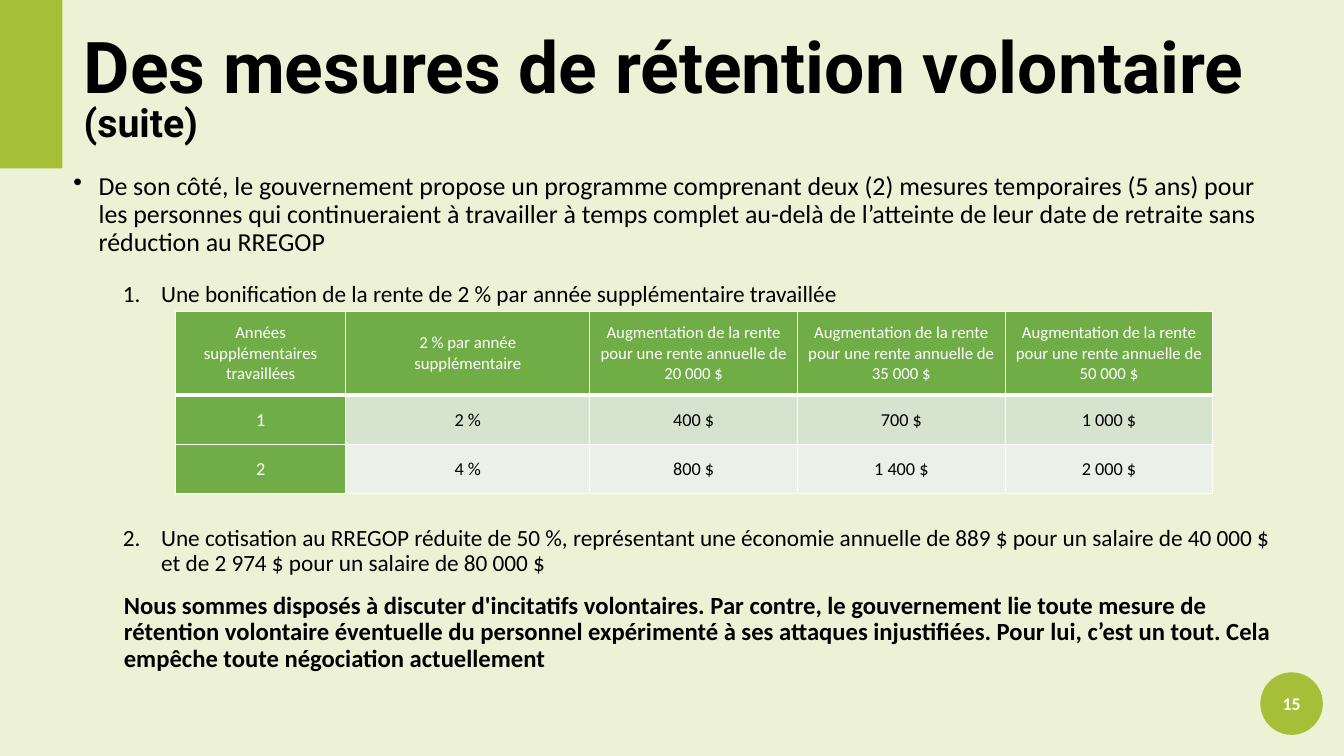
from dataclasses import dataclass

from lxml import etree
from pptx import Presentation
from pptx.dml.color import RGBColor
from pptx.enum.shapes import MSO_SHAPE
from pptx.enum.text import MSO_ANCHOR, PP_ALIGN
from pptx.oxml.ns import qn
from pptx.util import Inches, Pt

RECTANGLE, OVAL = MSO_SHAPE.RECTANGLE, MSO_SHAPE.OVAL
MIDDLE, CENTER = MSO_ANCHOR.MIDDLE, PP_ALIGN.CENTER

LIME, PALE_LIME = "A7BE39", "EDF2D7"
GREEN, BAND_DARK, BAND_LIGHT = "70AD47", "D5E3CF", "EBF1E9"
BLACK, WHITE = "000000", "FFFFFF"


@dataclass
class BodyParagraph:
    text: str
    size: float
    space_before: float = 0
    level: int = 0
    left: float = 0
    hanging: float = 0
    bullet: tuple[str, str, str] | None = None  # tag, attribute, value
    bold: bool = False


BULLET = ("a:buChar", "char", "•")
NUMBER = ("a:buAutoNum", "type", "arabicPeriod")

BODY = [
    BodyParagraph(
        "De son côté, le gouvernement propose un programme comprenant deux (2) mesures "
        "temporaires (5 ans) pour les personnes qui continueraient à travailler à temps "
        "complet au-delà de l’atteinte de leur date de retraite sans réduction au RREGOP",
        18.5, left=0.25, hanging=0.25, bullet=BULLET),
    BodyParagraph(
        "Une bonification de la rente de 2 % par année supplémentaire travaillée",
        16.6, 18, 1, 0.87, 0.38, NUMBER),
    BodyParagraph(
        "Une cotisation au RREGOP réduite de 50 %, représentant une économie annuelle de "
        "889 $ pour un salaire de 40 000 $ et de 2 974 $ pour un salaire de 80 000 $",
        16.6, 156, 1, 0.87, 0.38, NUMBER),
    BodyParagraph(
        "Nous sommes disposés à discuter d'incitatifs volontaires. Par contre, le "
        "gouvernement lie toute mesure de rétention volontaire éventuelle du personnel "
        "expérimenté à ses attaques injustifiées. Pour lui, c’est un tout. Cela empêche "
        "toute négociation actuellement",
        17.6, 12, 1, 0.5, bold=True),
]

PENSIONS = ["20 000 $", "35 000 $", "50 000 $"]
TABLE_ROWS = [
    ["Années supplémentaires\ntravaillées", "2 % par année\nsupplémentaire"]
    + [f"Augmentation de la rente pour une rente annuelle de {pension}" for pension in PENSIONS],
    ["1", "2 %", "400 $", "700 $", "1 000 $"],
    ["2", "4 %", "800 $", "1 400 $", "2 000 $"],
]
COLUMN_WIDTHS = [1.69, 2.42, 2.06, 2.06, 2.06]
ROW_HEIGHTS = [0.83, 0.49, 0.49]


def color(value: str) -> RGBColor:
    return RGBColor.from_string(value)


def set_font(font, size: float, value: str, bold: bool = False, name: str = "Calibri") -> None:
    font.size, font.bold, font.name = Pt(size), bold, name
    font.color.rgb = color(value)


def add_lime_shape(page, kind, left: float, top: float, width: float, height: float):
    shape = page.shapes.add_shape(kind, Inches(left), Inches(top), Inches(width), Inches(height))
    shape.shadow.inherit = False
    shape.fill.solid()
    shape.fill.fore_color.rgb = color(LIME)
    shape.line.fill.background()
    return shape


def add_text_frame(page, left: float, top: float, width: float, height: float):
    box = page.shapes.add_textbox(Inches(left), Inches(top), Inches(width), Inches(height))
    box.text_frame.word_wrap = True
    return box.text_frame


def add_title(page) -> None:
    frame = add_text_frame(page, 0.63, 0, 12.18, 1.67)
    frame.vertical_anchor = MIDDLE
    frame.margin_left, frame.margin_top = Inches(0.2), Inches(0.16)
    frame.margin_right, frame.margin_bottom = Inches(0.1), 0
    para = frame.paragraphs[0]
    para.line_spacing = 0.8
    for text, size in [("Des mesures de rétention volontaire ", 51), ("(suite)", 28)]:
        span = para.add_run()
        span.text = text
        set_font(span.font, size, BLACK, True, "Roboto")


def add_body(page) -> None:
    frame = add_text_frame(page, 0.63, 1.67, 12.18, 5.27)
    for index, item in enumerate(BODY):
        para = frame.add_paragraph() if index else frame.paragraphs[0]
        para.text = item.text
        para.level = item.level
        para.line_spacing = 0.9
        para.space_before = Pt(item.space_before)
        properties = para._p.get_or_add_pPr()
        properties.set("marL", str(Inches(item.left)))
        properties.set("indent", str(-Inches(item.hanging)))
        if item.bullet:
            tag, attribute, value = item.bullet
            etree.SubElement(properties, qn(tag)).set(attribute, value)
        set_font(para.font, item.size, BLACK, item.bold)


def add_border(cell, side: str, width: float) -> None:
    line = etree.Element(qn(f"a:{side}"), w=str(Pt(width)))
    fill = etree.SubElement(line, qn("a:solidFill"))
    etree.SubElement(fill, qn("a:srgbClr"), val=WHITE)
    properties = cell._tc.get_or_add_tcPr()
    position = len(properties.findall("*"))
    properties.insert(position, line)


def fill_cell(cell, text: str, row: int, column: int) -> None:
    for side in ["lnL", "lnR", "lnT", "lnB"]:
        heavy = (row, side) in [(0, "lnB"), (1, "lnT")]
        add_border(cell, side, 3 if heavy else 1)
    heading = row == 0 or column == 0
    cell.fill.solid()
    cell.fill.fore_color.rgb = color(GREEN if heading else [BAND_LIGHT, BAND_DARK][row % 2])
    cell.vertical_anchor = MIDDLE
    cell.text = text
    for para in cell.text_frame.paragraphs:
        para.alignment = CENTER
        set_font(para.font, 13 if row else 12, WHITE if heading else BLACK)


def add_pension_table(page) -> None:
    table = page.shapes.add_table(
        len(ROW_HEIGHTS), len(COLUMN_WIDTHS), Inches(1.74), Inches(3.09),
        Inches(sum(COLUMN_WIDTHS)), Inches(sum(ROW_HEIGHTS))).table
    for column, width in zip(table.columns, COLUMN_WIDTHS):
        column.width = Inches(width)
    for row, height in zip(table.rows, ROW_HEIGHTS):
        row.height = Inches(height)
    for row_index, texts in enumerate(TABLE_ROWS):
        for column_index, text in enumerate(texts):
            fill_cell(table.cell(row_index, column_index), text, row_index, column_index)


def add_page_number(page) -> None:
    badge = add_lime_shape(page, OVAL, 12.5, 6.67, 0.62, 0.62)
    frame = badge.text_frame
    frame.margin_left = frame.margin_right = Inches(0.04)
    frame.margin_top = frame.margin_bottom = Inches(0.04)
    frame.vertical_anchor = MIDDLE
    para = frame.paragraphs[0]
    para.text = "15"
    para.alignment = CENTER
    set_font(para.font, 12.7, WHITE, True)


def main() -> None:
    deck = Presentation()
    deck.slide_width, deck.slide_height = Inches(13.33), Inches(7.5)
    page = deck.slides.add_slide(deck.slide_layouts[6])
    page.background.fill.solid()
    page.background.fill.fore_color.rgb = color(PALE_LIME)
    add_lime_shape(page, RECTANGLE, 0, 0, 0.62, 1.67)
    add_page_number(page)
    add_title(page)
    add_body(page)
    add_pension_table(page)
    deck.save("out.pptx")


if __name__ == "__main__":
    main()
